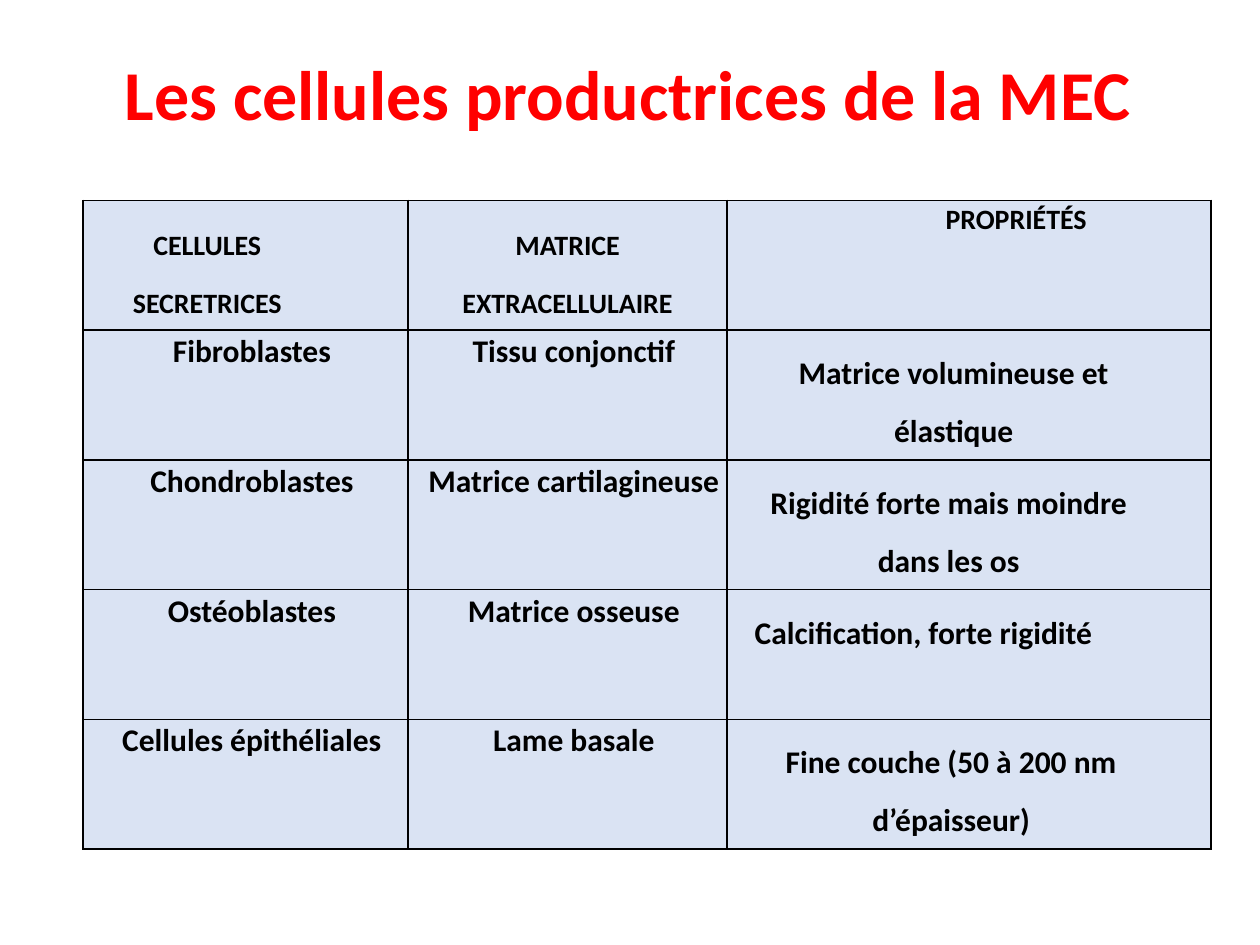
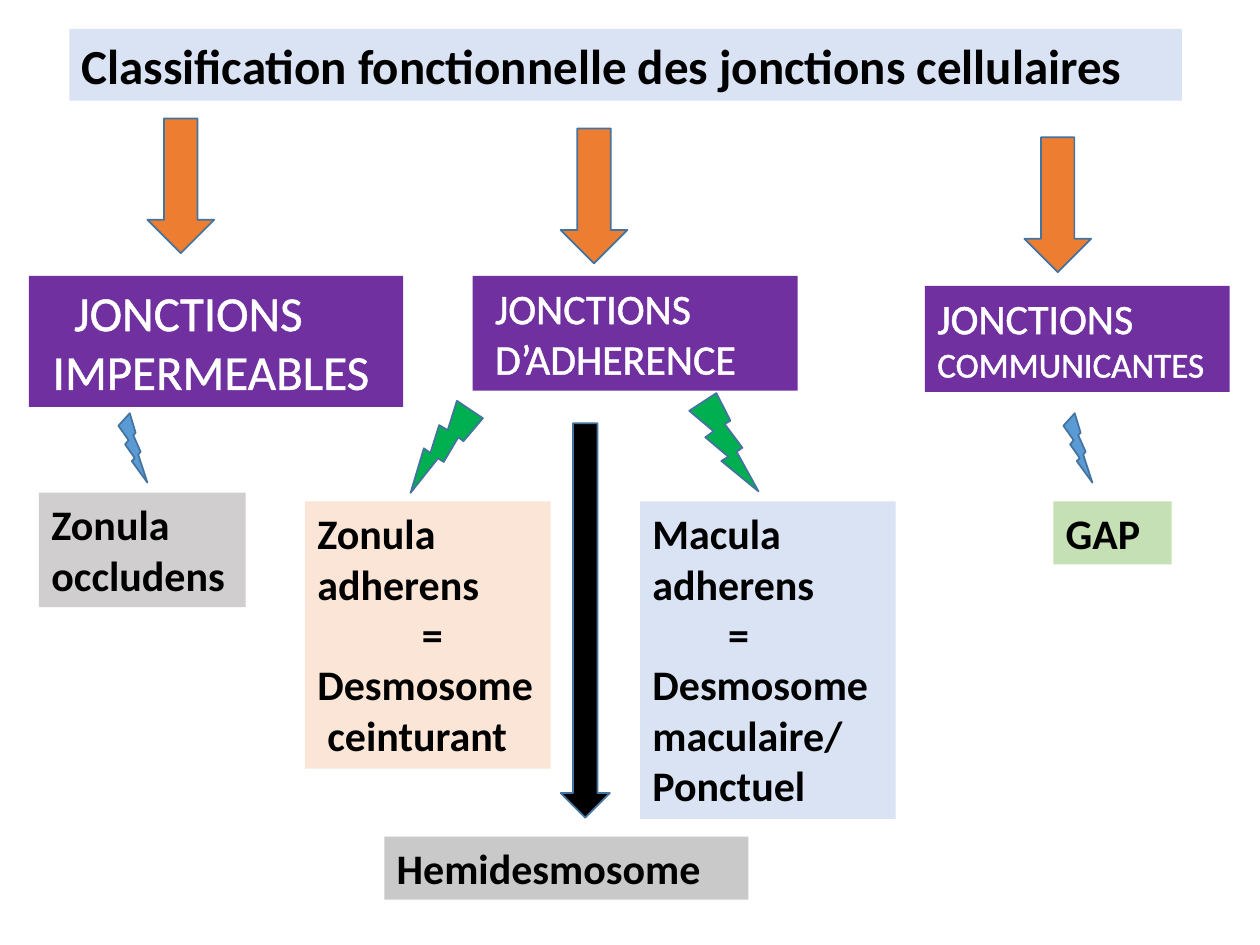
import dataclasses
import pptx
import pptx.dml.color
import pptx.enum.shapes
import pptx.enum.text
import pptx.oxml.ns
import pptx.util
from lxml import etree

Inches = pptx.util.Inches
Pt = pptx.util.Pt
Form = pptx.enum.shapes.MSO_SHAPE
Align = pptx.enum.text.PP_ALIGN


@dataclasses.dataclass(frozen=True)
class Theme:
    font: str = "Calibri"
    black: str = "000000"
    white: str = "FFFFFF"
    red: str = "FF0000"
    pale: str = "DAE3F3"
    purple: str = "7030A0"
    peach: str = "FBE5D6"
    mint: str = "C5E0B4"
    warm: str = "D0CECE"
    grey: str = "C9C9C9"
    orange: str = "ED7D31"
    blue: str = "5B9BD5"
    green: str = "00B050"
    edge: str = "43739E"
    title: int = 40
    large: int = 28
    mid: int = 24
    small: int = 20
    body: int = 18
    head: int = 16


THEME = Theme()

HEADS = [("CELLULES SECRETRICES", 0.1, 0.71),
         ("MATRICE EXTRACELLULAIRE", 0.1, 0.1),
         ("PROPRIÉTÉS", 0.75, 0)]
ROWS = [
    ("Fibroblastes", "Tissu conjonctif",
     ("Matrice volumineuse et élastique", 0.3, 0.54)),
    ("Chondroblastes", "Matrice cartilagineuse",
     ("Rigidité forte mais moindre dans les os", 0.3, 0.62)),
    ("Ostéoblastes", "Matrice osseuse",
     ("Calcification, forte rigidité", 0.1, 0.82)),
    ("Cellules épithéliales", "Lame basale",
     ("Fine couche (50 à 200 nm d’épaisseur)", 0.3, 0.58)),
]


def shade(hue):
    return pptx.dml.color.RGBColor.from_string(hue)


def paint(fill, hue):
    fill.solid()
    fill.fore_color.rgb = shade(hue)


def add_line(parent, tag, hue, width):
    line = etree.SubElement(parent, pptx.oxml.ns.qn(tag), w=str(Pt(width)))
    solid = etree.SubElement(line, pptx.oxml.ns.qn("a:solidFill"))
    etree.SubElement(solid, pptx.oxml.ns.qn("a:srgbClr"), val=hue)
    return line


def write(frame, *lines, size=THEME.mid, hue=THEME.black, bold=True,
          align=None, pitch=None, left=0, right=0, outline=False):
    frame.word_wrap = True
    for i, line in enumerate(lines):
        text, indent, own = (line, left, size) if isinstance(line, str) else line
        para = frame.paragraphs[0] if i == 0 else frame.add_paragraph()
        para.text = text
        para.alignment = align
        if pitch:
            para.line_spacing = Pt(pitch)
        props = para._p.get_or_add_pPr()
        props.set("marL", str(Inches(indent)))
        props.set("marR", str(Inches(right)))
        for run in para.runs:
            font = run.font
            font.name, font.size, font.bold = THEME.font, Pt(own), bold
            paint(font.fill, hue)
            if outline:
                style = run._r.get_or_add_rPr()
                style.insert(0, add_line(style, "a:ln", hue, 1.45))


def add_box(slide, spot, fill, *lines, **style):
    box = slide.shapes.add_textbox(*map(Inches, spot))
    if fill:
        paint(box.fill, fill)
    frame = box.text_frame
    write(frame, *lines, **style)
    frame.auto_size = pptx.enum.text.MSO_AUTO_SIZE.SHAPE_TO_FIT_TEXT
    return frame


def add_mark(slide, form, spot, fill, turn=0):
    mark = slide.shapes.add_shape(form, *map(Inches, spot))
    mark.shadow.inherit = False
    paint(mark.fill, fill)
    mark.line.color.rgb = shade(THEME.edge)
    mark.line.width = Pt(1)
    mark.rotation = turn


def fill_cell(cell, text, left, right, size, tall):
    paint(cell.fill, THEME.pale)
    cell.margin_left = cell.margin_right = cell.margin_bottom = 0
    cell.margin_top = Inches(0.04 if tall else 0.02)
    write(cell.text_frame, text, size=size, align=Align.CENTER,
          left=left, right=right, pitch=33.1 if tall else None)
    props = cell._tc.get_or_add_tcPr()
    for i, side in enumerate("LRTB"):
        props.insert(i, add_line(props, f"a:ln{side}", THEME.black, 1))


def add_grid(slide):
    grid = slide.shapes.add_table(5, 3, *map(Inches, (0.66, 1.59, 8.95, 5.17))).table
    grid.first_row = grid.horz_banding = False
    for column, width in zip(grid.columns, (2.58, 2.53, 3.84)):
        column.width = Inches(width)
    for row in grid.rows:
        row.height = Inches(1.03)
    for c, (text, left, right) in enumerate(HEADS):
        fill_cell(grid.cell(0, c), text, left, right, THEME.head, c < 2)
    for r, (cell, matrix, trait) in enumerate(ROWS, 1):
        for c, item in enumerate(((cell, 0.1, 0), (matrix, 0.1, 0), trait)):
            fill_cell(grid.cell(r, c), *item, THEME.body, c == 2)


def draw_cells(slide):
    frame = add_box(slide, (0.99, 0.39, 8.58, 0.69), None,
                    "Les cellules productrices de la MEC",
                    size=THEME.title, hue=THEME.red)
    frame.margin_left = frame.margin_right = frame.margin_bottom = 0
    frame.margin_top = Inches(0.01)
    add_grid(slide)


def draw_links(slide):
    t = THEME
    add_box(slide, (0.55, 0.23, 8.83, 0.57), t.pale,
            "Classification fonctionnelle des jonctions cellulaires", size=t.large)
    kinds = [
        ((7.34, 2.27, 2.42, 0.84),
         ("JONCTIONS", 0, t.mid), ("COMMUNICANTES", 0, t.small)),
        ((3.75, 2.19, 2.58, 0.91),
         ("JONCTIONS", 0.08, t.mid), ("D’ADHERENCE", 0.08, t.mid)),
        ((0.23, 2.19, 2.97, 1.04),
         ("JONCTIONS", 0.26, t.large), ("IMPERMEABLES", 0.09, t.large)),
    ]
    for spot, *lines in kinds:
        add_box(slide, spot, t.purple, *lines,
                hue=t.white, bold=False, outline=True)
    types = [
        ((8.36, 3.98, 0.94, 0.5), t.mint, "GAP"),
        ((2.42, 3.98, 1.95, 2.12), t.peach, "Zonula adherens",
         ("=", 0.83, t.mid), "Desmosome", ("ceinturant", 0.08, t.mid)),
        ((5.08, 3.98, 2.03, 2.52), t.pale, "Macula adherens",
         ("=", 0.6, t.mid), "Desmosome\vmaculaire/", "Ponctuel"),
        ((0.31, 3.91, 1.64, 0.91), t.warm, "Zonula occludens"),
        ((3.05, 6.64, 2.89, 0.5), t.grey, "Hemidesmosome"),
    ]
    for spot, fill, *lines in types:
        add_box(slide, spot, fill, *lines)
    for left in (0.94, 8.44):
        add_mark(slide, Form.LIGHTNING_BOLT, (left, 3.28, 0.23, 0.55), t.blue)
    add_mark(slide, Form.DOWN_ARROW, (4.45, 3.36, 0.39, 3.13), t.black)
    add_mark(slide, Form.LIGHTNING_BOLT, (5.47, 3.12, 0.55, 0.78), t.green)
    add_mark(slide, Form.LIGHTNING_BOLT, (3.24, 3.14, 0.53, 0.76), t.green, 67.1)
    for left, top in ((8.13, 1.09), (4.45, 1.02), (1.17, 0.94)):
        add_mark(slide, Form.DOWN_ARROW, (left, top, 0.53, 1.07), t.orange)


def main():
    deck = pptx.Presentation()
    deck.slide_width, deck.slide_height = Inches(10), Inches(7.5)
    for draw in (draw_cells, draw_links):
        draw(deck.slides.add_slide(deck.slide_layouts[6]))
    deck.save("out.pptx")


if __name__ == "__main__":
    main()
